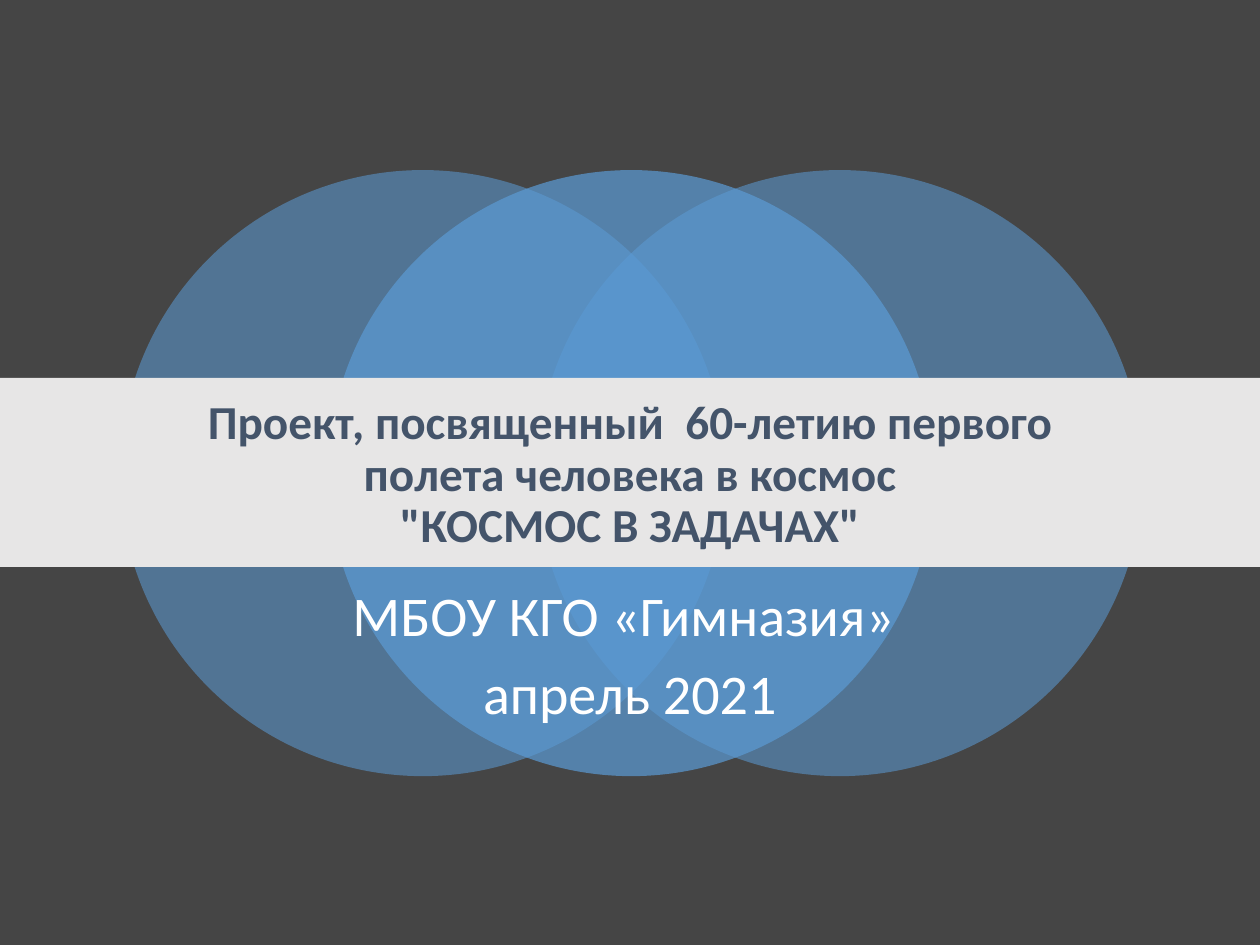
from lxml.etree import SubElement
from pptx import Presentation
from pptx.dml.color import RGBColor
from pptx.enum.shapes import MSO_SHAPE as Preset
from pptx.enum.text import MSO_ANCHOR as Anchor, MSO_AUTO_SIZE as AutoSize, PP_ALIGN as Align
from pptx.oxml.ns import qn
from pptx.util import Pt

BACKGROUND = RGBColor(0x45, 0x45, 0x45)
CIRCLE_BLUE = RGBColor(0x5B, 0x9B, 0xD5)
BAND_GREY = RGBColor(0xE7, 0xE6, 0xE6)
TITLE_BLUE = RGBColor(0x44, 0x54, 0x6A)
WHITE = RGBColor(0xFF, 0xFF, 0xFF)
FONT = "Calibri"

SLIDE_WIDTH, SLIDE_HEIGHT = 720, 540
CIRCLES_BOX = (68.4, 97.2, 584.6, 346.3)
SUBTITLE_BOX = (90, 332.6, 540, 44.6)
BAND_BOX = (0, 216, SLIDE_WIDTH, 108)
TITLE_BOX = (90, 231.1, 540, 81.4)

TITLE_LINES = ["Проект, посвященный  60-летию первого полета человека в космос",
               '"КОСМОС В ЗАДАЧАХ"']
SUBTITLE_LINES = ["МБОУ КГО «Гимназия» ", "апрель 2021"]


def add_filled_shape(shapes, preset, box, color, opacity=100):
    shape = shapes.add_shape(preset, *map(Pt, box))
    shape.shadow.inherit = False
    shape.fill.solid()
    shape.fill.fore_color.rgb = color
    shape.line.fill.background()
    if opacity < 100:
        color_element = shape.element.spPr.find(qn("a:solidFill"))[0]
        SubElement(color_element, qn("a:alpha"), val=str(opacity * 1000))
    return shape


def add_text_run(paragraph, text, size, color, bold=False):
    run = paragraph.add_run()
    run.text = text
    run.font.name = FONT
    run.font.size = Pt(size)
    run.font.bold = bold
    run.font.color.rgb = color


def prepare_text(shape, anchor):
    frame = shape.text_frame
    frame.word_wrap = True
    frame.auto_size = AutoSize.NONE
    frame.vertical_anchor = anchor
    return frame


def format_paragraph(paragraph):
    paragraph.alignment = Align.CENTER
    paragraph.line_spacing = 0.9


def add_circles(slide, box):
    left, top, width, diameter = box
    step = (width - diameter) / 2
    group = slide.shapes.add_group_shape()
    for position, opacity in ((0, 55), (2, 55), (1, 70)):
        circle_box = (left + position * step, top, diameter, diameter)
        add_filled_shape(group.shapes, Preset.OVAL, circle_box, CIRCLE_BLUE, opacity)


def add_subtitle(slide, box):
    frame = prepare_text(slide.shapes.add_textbox(*map(Pt, box)), Anchor.TOP)
    for index, line in enumerate(SUBTITLE_LINES):
        paragraph = frame.add_paragraph() if index else frame.paragraphs[0]
        format_paragraph(paragraph)
        paragraph.space_before = Pt(10 if index else 0)
        add_text_run(paragraph, line, 32, WHITE)


def place_title(slide, box):
    title = slide.shapes.title
    title.left, title.top, title.width, title.height = map(Pt, box)
    title.element.getparent().append(title.element)
    paragraph = prepare_text(title, Anchor.MIDDLE).paragraphs[0]
    format_paragraph(paragraph)
    paragraph.space_before = Pt(0)
    for index, line in enumerate(TITLE_LINES):
        if index:
            paragraph.add_line_break()
        add_text_run(paragraph, line, 27, TITLE_BLUE, bold=True)


def main():
    presentation = Presentation()
    presentation.slide_width = Pt(SLIDE_WIDTH)
    presentation.slide_height = Pt(SLIDE_HEIGHT)
    slide = presentation.slides.add_slide(presentation.slide_layouts.get_by_name("Title Only"))
    slide.background.fill.solid()
    slide.background.fill.fore_color.rgb = BACKGROUND
    add_circles(slide, CIRCLES_BOX)
    add_subtitle(slide, SUBTITLE_BOX)
    add_filled_shape(slide.shapes, Preset.RECTANGLE, BAND_BOX, BAND_GREY)
    place_title(slide, TITLE_BOX)
    presentation.save("out.pptx")


if __name__ == "__main__":
    main()
